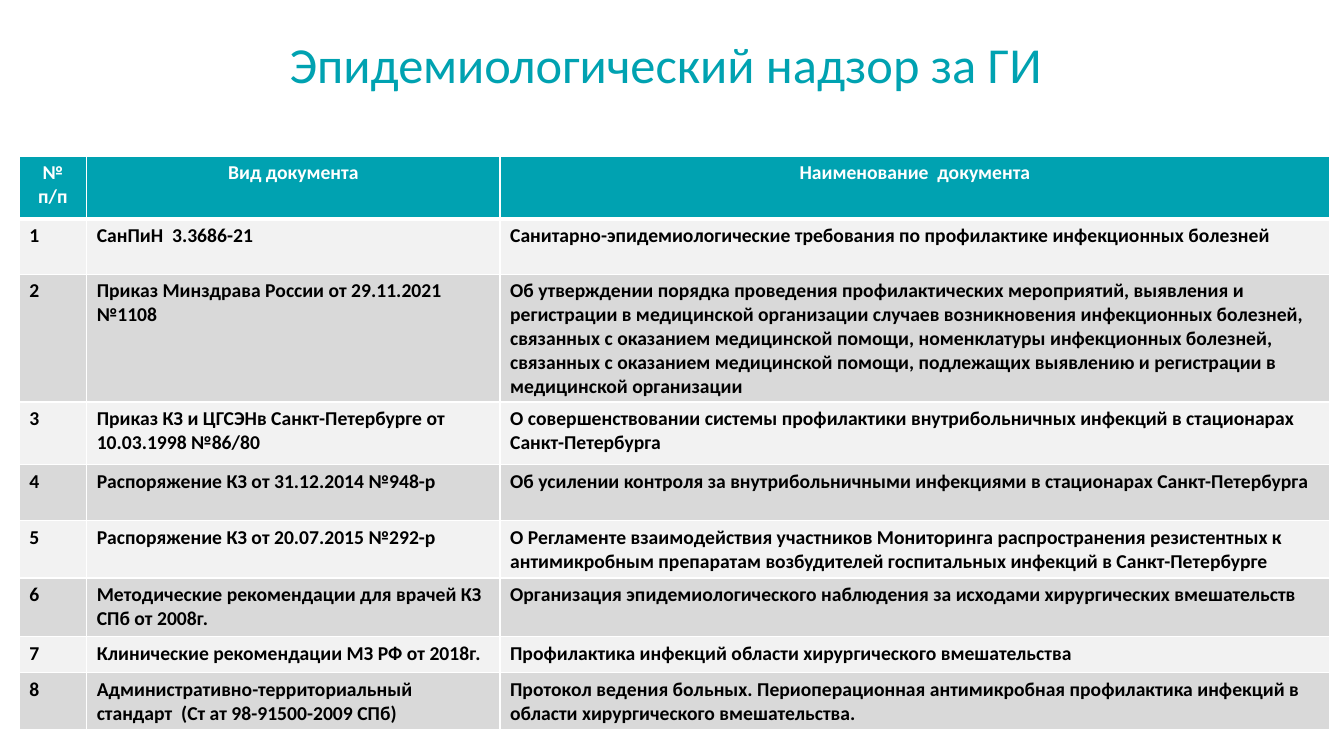
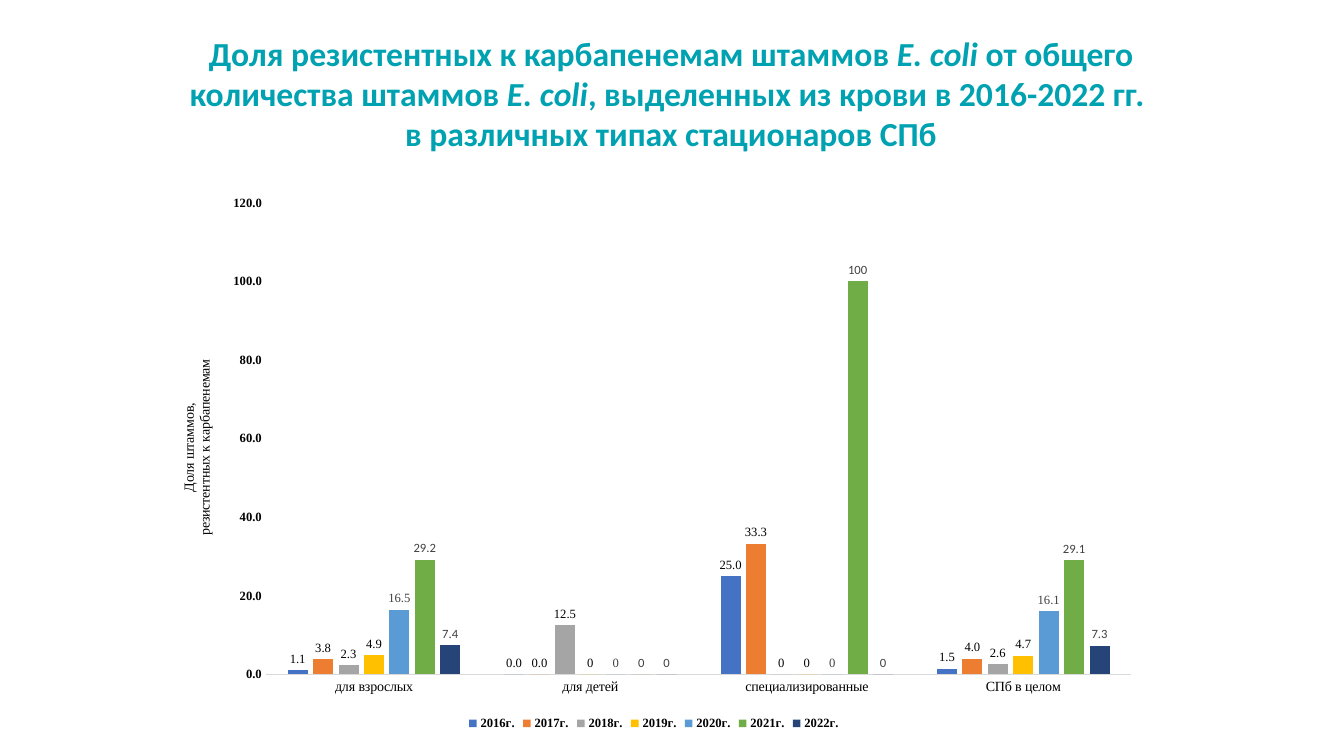
from lxml import etree
from pptx import Presentation, util as u
from pptx.chart.data import CategoryChartData
from pptx.dml.color import RGBColor
from pptx.enum import chart as ch, text as tx
from pptx.oxml import ns

PX = 9144
HUES = {
    "teal": "00A2B1", "white": "FFFFFF", "black": "000000", "pale": "F2F2F2",
    "grey": "D9D9D9", "dark": "404040", "blue": "4472C4", "orange": "ED7D31",
    "ash": "A5A5A5", "gold": "FFC000", "sky": "5B9BD5", "green": "70AD47",
    "navy": "264478",
}
SANS, SERIF = "Calibri", "Times New Roman"

COLS = [67, 410, 823]
ROWS = [62, 55, 121, 62, 56, 54, 58, 36, 56]
HEAD = ["№ п/п", "Вид документа", "Наименование  документа"]
DOCS = [
    ("СанПиН  3.3686-21",
     "Санитарно-эпидемиологические требования по профилактике инфекционных болезней"),
    ("Приказ Минздрава России от 29.11.2021 №1108",
     "Об утверждении порядка проведения профилактических мероприятий, выявления и "
     "регистрации в медицинской организации случаев возникновения инфекционных болезней, "
     "связанных с оказанием медицинской помощи, номенклатуры инфекционных болезней, "
     "связанных с оказанием медицинской помощи, подлежащих выявлению и регистрации в "
     "медицинской организации"),
    ("Приказ КЗ и ЦГСЭНв Санкт-Петербурге от 10.03.1998 №86/80",
     "О совершенствовании системы профилактики внутрибольничных инфекций в стационарах "
     "Санкт-Петербурга"),
    ("Распоряжение КЗ от 31.12.2014 №948-р",
     "Об усилении контроля за внутрибольничными инфекциями в стационарах Санкт-Петербурга"),
    ("Распоряжение КЗ от 20.07.2015 №292-р",
     "О Регламенте взаимодействия участников Мониторинга распространения резистентных к "
     "антимикробным препаратам возбудителей госпитальных инфекций в Санкт-Петербурге"),
    ("Методические рекомендации для врачей КЗ СПб от 2008г.",
     "Организация эпидемиологического наблюдения за исходами хирургических вмешательств"),
    ("Клинические рекомендации МЗ РФ от 2018г.",
     "Профилактика инфекций области хирургического вмешательства"),
    ("Административно-территориальный стандарт  (Ст ат 98-91500-2009 СПб)",
     "Протокол ведения больных. Периоперационная антимикробная профилактика инфекций в "
     "области хирургического вмешательства."),
]

CATS = ["для взрослых", "для детей", "cпециализированные", "СПб в целом"]
YEARS = [
    ("2016г.", (1.1, 0, 25, 1.5), "blue", "black", SERIF, "0.0"),
    ("2017г.", (3.8, 0, 33.3, 4), "orange", "black", SERIF, "0.0"),
    ("2018г.", (2.3, 12.5, 0, 2.6), "ash", "black", SERIF, "General"),
    ("2019г.", (4.9, 0, 0, 4.7), "gold", "black", SERIF, "General"),
    ("2020г.", (16.5, 0, 0, 16.1), "sky", "dark", SERIF, "General"),
    ("2021г.", (29.2, 0, 100, 29.1), "green", "dark", SANS, "General"),
    ("2022г.", (7.4, 0, 0, 7.3), "navy", "dark", SANS, "General"),
]


def px(num):
    """Turn px into EMU."""
    return u.Emu(round(num * PX))


def hue(name):
    """Look up a colour."""
    return RGBColor.from_string(HUES[name])


def style(font, size, color="black", face=SERIF, bold=False):
    """Set the look of a font."""
    font.size, font.name, font.bold = u.Pt(size), face, bold
    font.color.rgb = hue(color)


def title(slide, box, parts, size, bold=False):
    """Place the title; parts are (text, italic) pairs, with newlines as breaks."""
    shape = slide.shapes.title
    shape.left, shape.top, shape.width, shape.height = map(px, box)
    frame = shape.text_frame
    frame.word_wrap = True
    frame.auto_size = tx.MSO_AUTO_SIZE.SHAPE_TO_FIT_TEXT
    frame.vertical_anchor = tx.MSO_ANCHOR.MIDDLE
    para = frame.paragraphs[0]
    para.alignment = tx.PP_ALIGN.CENTER
    style(para.font, size, "teal", SANS, bold)
    for words, slant in parts:
        for n, piece in enumerate(words.split("\n")):
            if n:
                para.add_line_break()
            run = para.add_run()
            run.text = piece
            if slant:
                run.font.italic = True


def edge(cell, side, width):
    """Draw one white cell border."""
    line = etree.SubElement(cell._tc.get_or_add_tcPr(), ns.qn("a:ln" + side),
                            w=str(u.Pt(width)))
    fill = etree.SubElement(line, ns.qn("a:solidFill"))
    etree.SubElement(fill, ns.qn("a:srgbClr"), val=HUES["white"])


def grid(slide, box):
    """Place the table of documents in a box."""
    data = [HEAD] + [(str(n), *doc) for n, doc in enumerate(DOCS, 1)]
    table = slide.shapes.add_table(len(ROWS), len(COLS), *map(px, box)).table
    for col, wide in zip(table.columns, COLS):
        col.width = px(wide)
    for r, (row, high) in enumerate(zip(table.rows, ROWS)):
        row.height = px(high)
        for cell, words in zip(row.cells, data[r]):
            for side in "LRTB":
                thick = (r, side) in ((0, "B"), (1, "T"))
                edge(cell, side, 3 if thick else 1)
            cell.fill.solid()
            cell.fill.fore_color.rgb = hue(("grey", "pale")[r % 2] if r else "teal")
            cell.text = words
            para = cell.text_frame.paragraphs[0]
            if r == 0:
                para.alignment = tx.PP_ALIGN.CENTER
            style(para.font, 14, "black" if r else "white", SANS, True)


def pin(part, index, **spots):
    """Give a chart part a fixed layout."""
    for old in part.findall(ns.qn("c:layout")):
        part.remove(old)
    lay = etree.Element(ns.qn("c:layout"))
    man = etree.SubElement(lay, ns.qn("c:manualLayout"))
    if "w" in spots:
        etree.SubElement(man, ns.qn("c:layoutTarget"), val="inner")
    for key in "xy":
        etree.SubElement(man, ns.qn(f"c:{key}Mode"), val="edge")
    for key, val in spots.items():
        etree.SubElement(man, ns.qn("c:" + key), val=str(val))
    part.insert(index, lay)


def axes(chart):
    """Format both axes and the title of the value axis."""
    cat, val = chart.category_axis, chart.value_axis
    for axis in (cat, val):
        axis.major_tick_mark = axis.minor_tick_mark = ch.XL_TICK_MARK.NONE
        axis.has_major_gridlines = False
    style(cat.tick_labels.font, 10)
    cat.format.line.color.rgb = hue("grey")
    cat.format.line.width = u.Pt(0.75)
    style(val.tick_labels.font, 9, bold=True)
    val.tick_labels.number_format = "0.0"
    val.tick_labels.number_format_is_linked = False
    val.format.line.fill.background()
    val.minimum_scale, val.maximum_scale, val.major_unit = 0, 120, 20
    frame = val.axis_title.text_frame
    frame.text = "Доля штаммов,\nрезистентных к карбапенемам"
    for para in frame.paragraphs:
        style(para.font, 10)
    head = chart.element.xpath(".//c:valAx/c:title")[0]
    body = head.find(".//" + ns.qn("a:bodyPr"))
    body.set("rot", "-5400000")
    body.set("vert", "horz")
    pin(head, 1, x=0.02, y=0.31)


def bars(slide, box):
    """Place the column chart in a box."""
    data = CategoryChartData()
    data.categories = CATS
    for name, vals, *_ in YEARS:
        data.add_series(name, vals)
    chart = slide.shapes.add_chart(
        ch.XL_CHART_TYPE.COLUMN_CLUSTERED, *map(px, box), data).chart
    style(chart.font, 10, face=SANS)
    chart.has_title = False
    chart.has_legend = True
    chart.legend.position = ch.XL_LEGEND_POSITION.BOTTOM
    chart.legend.include_in_layout = False
    style(chart.legend.font, 9, bold=True)
    plot = chart.plots[0]
    plot.gap_width, plot.overlap, plot.vary_by_categories = 219, -27, False
    for line, (_, _, color, ink, face, form) in zip(plot.series, YEARS):
        line.format.fill.solid()
        line.format.fill.fore_color.rgb = hue(color)
        line.invert_if_negative = False
        tags = line.data_labels
        tags.show_value = True
        tags.position = ch.XL_LABEL_POSITION.OUTSIDE_END
        tags.number_format = form
        tags.number_format_is_linked = False
        style(tags.font, 9, ink, face)
    axes(chart)
    pin(chart.element.xpath(".//c:plotArea")[0], 0, x=0.11, y=0.03, w=0.87, h=0.86)


def main():
    """Build and save both slides."""
    deck = Presentation()
    deck.slide_width, deck.slide_height = px(1333), px(750)
    first, second = (deck.slides.add_slide(deck.slide_layouts[5]) for _ in range(2))
    title(first, (165, 27, 991, 71), [("Эпидемиологический надзор за ГИ", False)], 36)
    grid(first, (19, 155, sum(COLS), sum(ROWS)))
    title(second, (165, 27, 1001, 131), [
        ("Доля резистентных к карбапенемам штаммов ", False),
        ("E. сoli ", True),
        ("от общего количества штаммов ", False),
        ("E. сoli", True),
        (", выделенных из крови в 2016-2022 гг. \nв различных типах стационаров СПб", False),
    ], 24, True)
    bars(second, (155, 185, 987, 544))
    deck.save("out.pptx")


if __name__ == "__main__":
    main()
